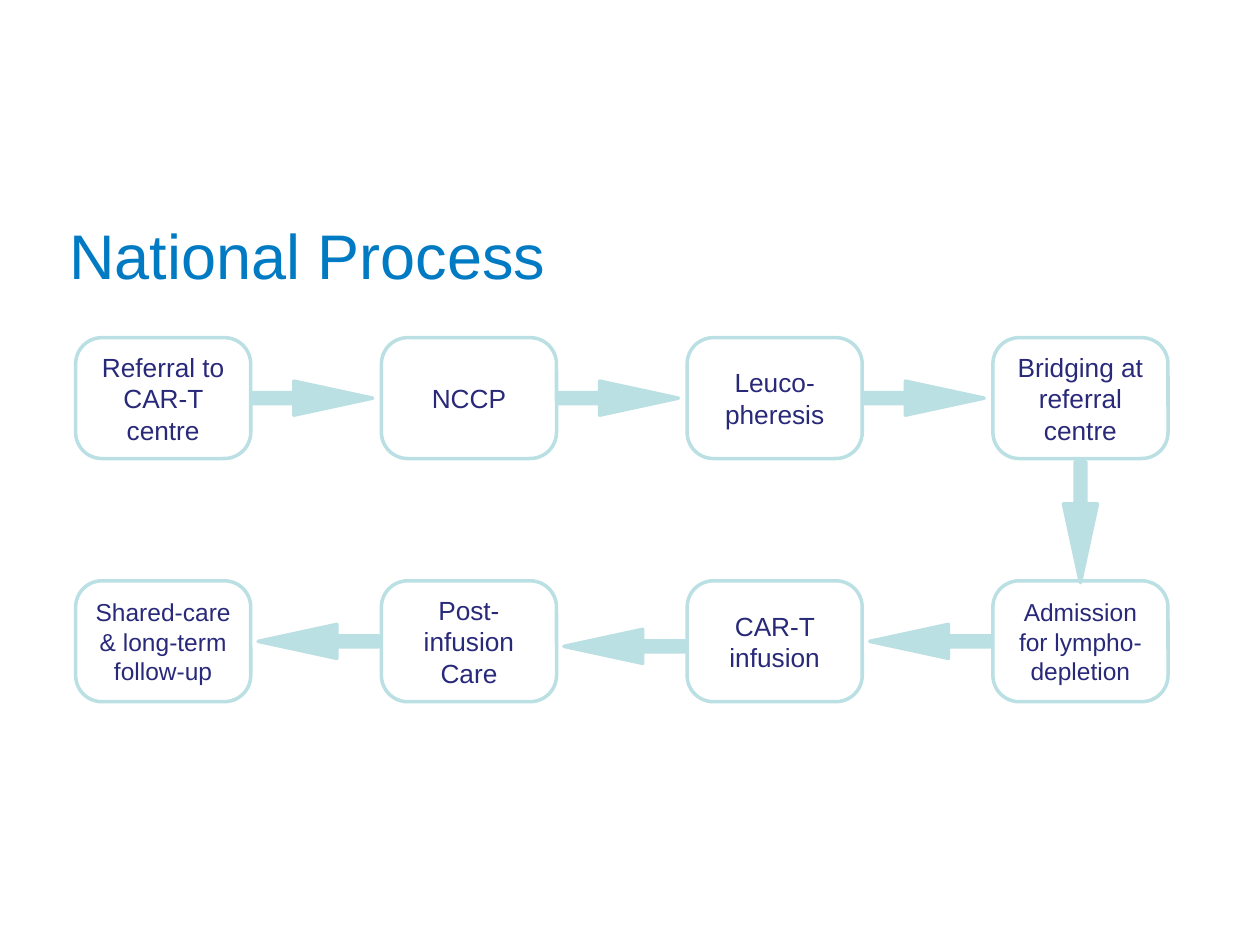
import dataclasses

import pptx
import pptx.dml.color
import pptx.enum.shapes
import pptx.enum.text
import pptx.util


@dataclasses.dataclass(frozen=True)
class Theme:
    font: str = "Arial"
    title_color: str = "007AC3"
    text_color: str = "29297A"
    box_color: str = "FFFFFF"
    accent: str = "BBE0E3"
    title_size: int = 36
    step_size: int = 15
    small_size: int = 14
    line_width: int = 2
    inset: float = 0.05


THEME = Theme()
SLIDE_SIZE = (10, 7.5)
TITLE_BOX = (0.5, 1.67, 7.42, 0.67)
PROCESS_BOX = (0.6, 2.68, 8.67, 2.89)
STEP_SIZE = (1.39, 0.96)
ARROW_SIZE = (0.96, 0.27)
COLUMNS, ROWS = 4, 2

STEPS = [
    ("Referral to CAR-T centre", 0, 0, THEME.step_size),
    ("NCCP", 1, 0, THEME.step_size),
    ("Leuco-\npheresis", 2, 0, THEME.step_size),
    ("Bridging at referral centre", 3, 0, THEME.step_size),
    ("Admission for lympho-depletion", 3, 1, THEME.small_size),
    ("CAR-T infusion", 2, 1, THEME.step_size),
    ("Post-infusion Care", 1, 1, THEME.step_size),
    ("Shared-care & long-term follow-up", 0, 1, THEME.small_size),
]
ARROW_ROTATION = {(1, 0): 0, (0, 1): 90, (-1, 0): 180}
ARROW_SHIFT = {0: (-0.03, 0), 90: (0, 0.02), 180: (0.02, 0)}
LOWERED_ARROW = ("CAR-T infusion", 0.04)


def inches(values):
    return [pptx.util.Inches(value) for value in values]


def set_attributes(target, values):
    for name, value in values.items():
        setattr(target, name, value)


def format_text(text_frame, text, size, color, alignment, anchor):
    inset = pptx.util.Inches(THEME.inset)
    sides = ("left", "top", "right", "bottom")
    set_attributes(text_frame, {f"margin_{side}": inset for side in sides})
    set_attributes(text_frame, {
        "text": text,
        "word_wrap": True,
        "auto_size": pptx.enum.text.MSO_AUTO_SIZE.NONE,
        "vertical_anchor": anchor,
    })
    for paragraph in text_frame.paragraphs:
        paragraph.alignment = alignment
        set_attributes(paragraph.font, {"name": THEME.font, "size": pptx.util.Pt(size)})
        paragraph.font.color.rgb = pptx.dml.color.RGBColor.from_string(color)


def add_block(slide, kind, center, size, fill, adjustments):
    corner = [middle - length / 2 for middle, length in zip(center, size)]
    shape = slide.shapes.add_shape(kind, *inches([*corner, *size]))
    shape.shadow.inherit = False
    shape.fill.solid()
    shape.fill.fore_color.rgb = pptx.dml.color.RGBColor.from_string(fill)
    shape.line.color.rgb = pptx.dml.color.RGBColor.from_string(THEME.accent)
    shape.line.width = pptx.util.Pt(THEME.line_width)
    for index, value in enumerate(adjustments):
        shape.adjustments[index] = value
    return shape


def add_title(slide, box, text):
    title = slide.shapes.title
    set_attributes(title, dict(zip(("left", "top", "width", "height"), inches(box))))
    format_text(title.text_frame, text, THEME.title_size, THEME.title_color,
                pptx.enum.text.PP_ALIGN.LEFT, pptx.enum.text.MSO_ANCHOR.TOP)


def add_step(slide, center, text, size):
    shape = add_block(slide, pptx.enum.shapes.MSO_SHAPE.ROUNDED_RECTANGLE,
                      center, STEP_SIZE, THEME.box_color, [0.218])
    format_text(shape.text_frame, text, size, THEME.text_color,
                pptx.enum.text.PP_ALIGN.CENTER, pptx.enum.text.MSO_ANCHOR.MIDDLE)


def add_arrow(slide, start, end, rotation, drop):
    shift_x, shift_y = ARROW_SHIFT[rotation]
    center = ((start[0] + end[0]) / 2 + shift_x,
              (start[1] + end[1]) / 2 + shift_y + drop)
    arrow = add_block(slide, pptx.enum.shapes.MSO_SHAPE.RIGHT_ARROW,
                      center, ARROW_SIZE, THEME.accent, [0.32, 2.314])
    arrow.rotation = rotation


def add_process(slide, box, steps):
    left, top, width, height = box
    step_width, step_height = STEP_SIZE
    column_pitch = (width - step_width) / (COLUMNS - 1)
    row_pitch = (height - step_height) / (ROWS - 1)

    def center_of(column, row):
        return (left + step_width / 2 + column * column_pitch,
                top + step_height / 2 + row * row_pitch)

    for text, column, row, size in steps:
        add_step(slide, center_of(column, row), text, size)
    for (text, column, row, _), (_, next_column, next_row, _) in zip(steps, steps[1:]):
        rotation = ARROW_ROTATION[next_column - column, next_row - row]
        drop = LOWERED_ARROW[1] if text == LOWERED_ARROW[0] else 0
        add_arrow(slide, center_of(column, row), center_of(next_column, next_row),
                  rotation, drop)


def main():
    presentation = pptx.Presentation()
    set_attributes(presentation, dict(zip(("slide_width", "slide_height"), inches(SLIDE_SIZE))))
    slide = presentation.slides.add_slide(presentation.slide_layouts.get_by_name("Title Only"))
    add_title(slide, TITLE_BOX, "National Process")
    add_process(slide, PROCESS_BOX, STEPS)
    presentation.save("out.pptx")


if __name__ == "__main__":
    main()
